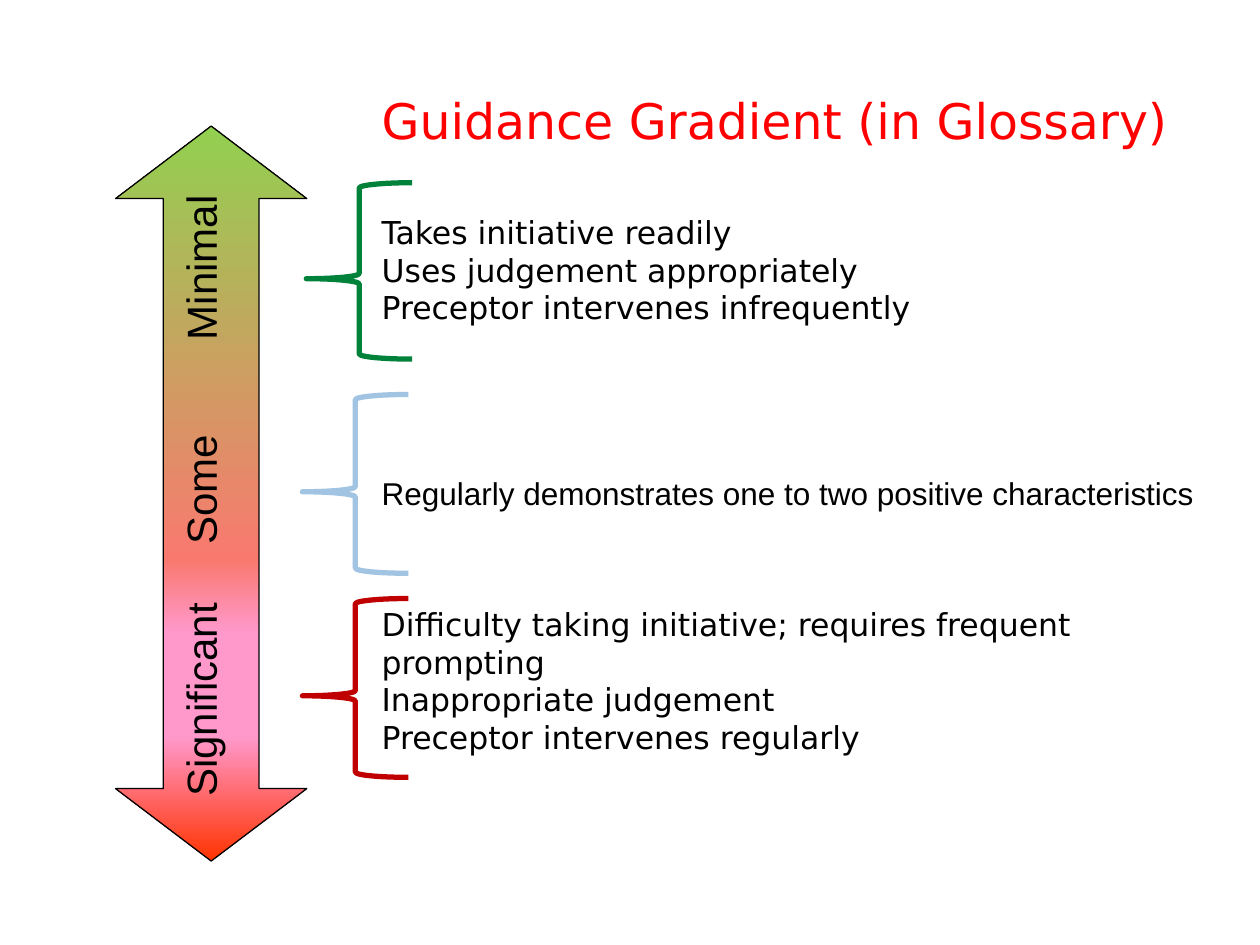
from lxml.etree import SubElement
from pptx import Presentation
from pptx.dml.color import RGBColor
from pptx.enum.shapes import MSO_SHAPE
from pptx.enum.text import MSO_ANCHOR, PP_ALIGN
from pptx.oxml.ns import qn
from pptx.util import Pt

COLORS = {
    "text": "000000", "title": "FF0000",
    "minimal": "00823B", "some": "A1C4E3", "significant": "C00000",
}
GRADIENT = [(0, "FF3300"), (17, "FF99CC"), (31, "FF99CC"), (41, "F9796F"), (100, "92D050")]


def style(paragraph, font_name, size, color):
    paragraph.font.name = font_name
    paragraph.font.size = Pt(size)
    paragraph.font.color.rgb = RGBColor.from_string(color)


prs = Presentation()
prs.slide_width, prs.slide_height = Pt(720), Pt(540)
slide = prs.slides.add_slide(prs.slide_layouts[6])
shapes = slide.shapes

# Guidance arrow, turned to run from bottom to top
arrow = shapes.add_shape(MSO_SHAPE.LEFT_RIGHT_ARROW, Pt(-89.3), Pt(227.4), Pt(420), Pt(109.3))
arrow.rotation = 270
arrow.shadow.inherit = False
arrow.adjustments[0], arrow.adjustments[1] = 0.5, 0.379
arrow.line.color.rgb = RGBColor.from_string(COLORS["text"])
arrow.line.width = Pt(0.75)
arrow.fill.gradient()
arrow.fill.gradient_angle = 0
stops = arrow.element.spPr.find(qn("a:gradFill")).find(qn("a:gsLst"))
for old_stop in list(stops):
    stops.remove(old_stop)
for percent, color in GRADIENT:
    stop = SubElement(stops, qn("a:gs"), pos=str(percent * 1000))
    SubElement(stop, qn("a:srgbClr"), val=color)

# Level names along the arrow, spaced by tab stops
levels = arrow.text_frame
levels.vertical_anchor = MSO_ANCHOR.TOP
levels.margin_left, levels.margin_right = Pt(16), Pt(0)
levels.margin_top = Pt(6.5)
levels.text = "Significant\tSome\tMinimal"
level_line = levels.paragraphs[0]
level_line.alignment = PP_ALIGN.LEFT
tabs = SubElement(level_line._p.get_or_add_pPr(), qn("a:tabLst"))
for position in (144, 261):
    SubElement(tabs, qn("a:tab"), pos=str(Pt(position)), algn="l")
style(level_line, "Arial", 24, COLORS["text"])

# Title and descriptions: top, width, height, wrap, font, size, color, lines
texts = [
    (48.2, 472.3, 41, True, "DejaVu Sans", 28, "title", ["Guidance Gradient (in Glossary)"]),
    (118.1, 360, 72.7, True, "DejaVu Sans", 18, "text",
     ["Takes initiative readily", "Uses judgement appropriately",
      "Preceptor intervenes infrequently"]),
    (267.1, 483.1, 28.8, False, "Arial", 18, "text",
     ["Regularly demonstrates one to two positive characteristics"]),
    (342, 408.2, 94.3, True, "DejaVu Sans", 18, "text",
     ["Difficulty taking initiative; requires frequent prompting",
      "Inappropriate judgement", "Preceptor intervenes regularly"]),
]
for top, width, height, wrap, font_name, size, color, lines in texts:
    description = shapes.add_textbox(Pt(211), Pt(top), Pt(width), Pt(height)).text_frame
    description.word_wrap = wrap
    description.text = "\n".join(lines)
    for paragraph in description.paragraphs:
        style(paragraph, font_name, size, COLORS[color])

# Braces linking each level to its description
for level, left, top, height in [
    ("minimal", 175, 104.4, 100.8),
    ("significant", 172.8, 342, 102.2),
    ("some", 172.8, 225.4, 102.2),
]:
    brace = shapes.add_shape(MSO_SHAPE.RIGHT_BRACE, Pt(left), Pt(top), Pt(60.5), Pt(height))
    brace.rotation = 180
    brace.shadow.inherit = False
    brace.adjustments[0], brace.adjustments[1] = 0.049, 0.456
    brace.fill.background()
    brace.line.color.rgb = RGBColor.from_string(COLORS[level])
    brace.line.width = Pt(3)

prs.save("out.pptx")
